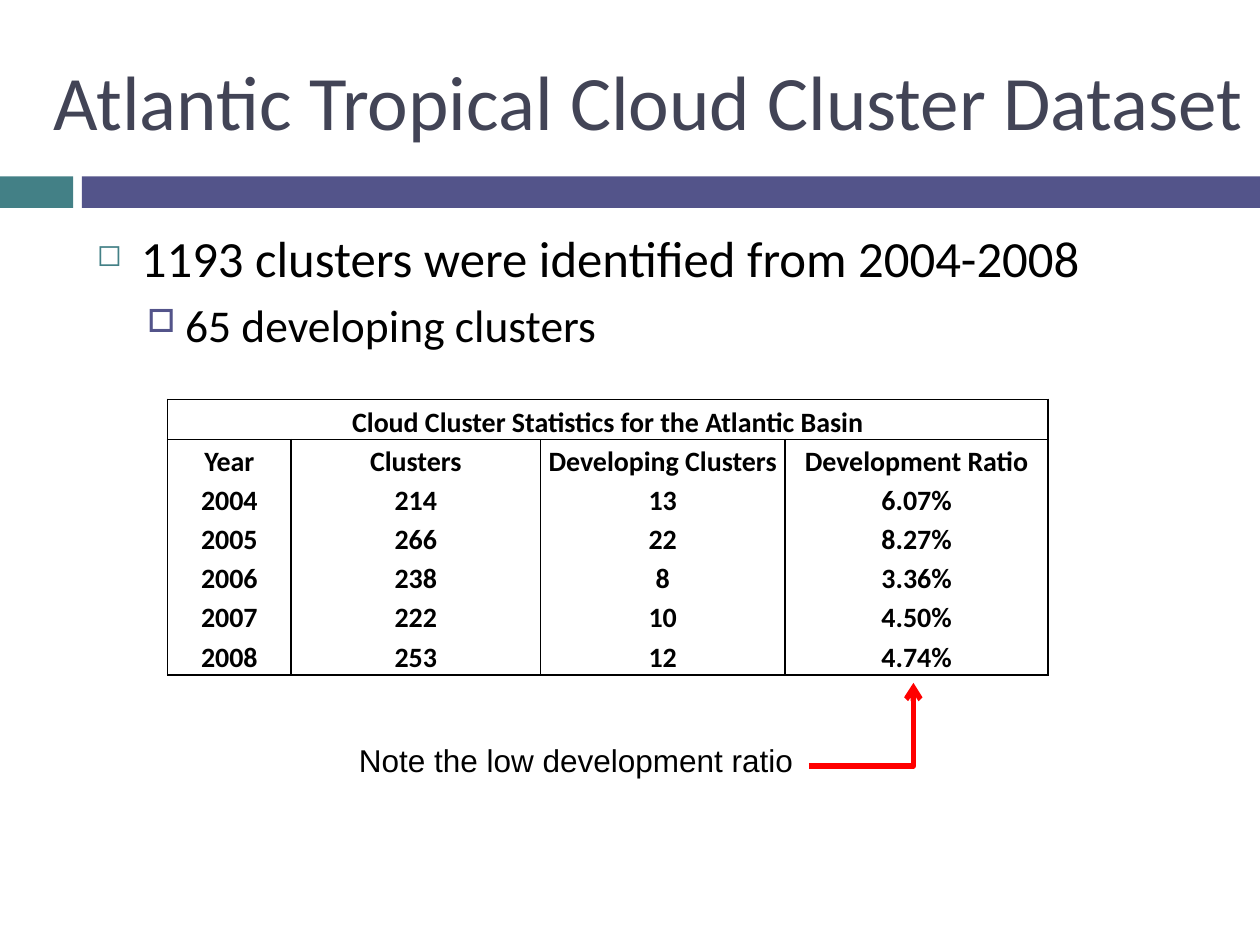
from lxml.etree import SubElement as Sub
from pptx import Presentation
from pptx.dml.color import RGBColor as RGB
from pptx.enum.shapes import MSO_CONNECTOR as Link, MSO_SHAPE as Shape
from pptx.enum.text import MSO_ANCHOR as Anchor, PP_ALIGN as Align
from pptx.oxml.ns import qn
from pptx.util import Inches, Pt

# Content
TITLE = "Atlantic Tropical Cloud Cluster Dataset"
NOTE = "Note the low development ratio"
BARS = [(0, 0.58, "438086"), (0.65, 9.35, "53548A")]
# text, size, space before, margin, hang, bullet, bullet colour, bullet percent
POINTS = [
    ("1193 clusters were identified from 2004-2008", 29, 7, 0.35, 0.35, "◻", "438086", 60),
    ("65 developing clusters", 26, 5.5, 0.7, 0.3, "□", "53548A", 70),
]
ROWS = [
    ("Cloud Cluster Statistics for the Atlantic Basin", "", "", ""),
    ("Year", "Clusters", "Developing Clusters", "Development Ratio"),
    ("2004", "214", "13", "6.07%"),
    ("2005", "266", "22", "8.27%"),
    ("2006", "238", "8", "3.36%"),
    ("2007", "222", "10", "4.50%"),
    ("2008", "253", "12", "4.74%"),
]
COLS = [0.98, 1.98, 1.94, 2.09]
HIGH = [0.32] + [0.31] * 5 + [0.32]
CELL = {"margin_left": Inches(0.01), "margin_right": Inches(0.01),
        "margin_top": Inches(0.01), "margin_bottom": 0,
        "vertical_anchor": Anchor.BOTTOM}


def color(code):
    return RGB.from_string(code)


def add(par, tag, **attrs):
    return Sub(par, qn(tag), {key: str(val) for key, val in attrs.items()})


def write(para, text, size, face="Calibri", tint="000000", bold=False):
    run = para.add_run()
    run.text = text
    for key, val in {"size": Pt(size), "name": face, "bold": bold}.items():
        setattr(run.font, key, val)
    run.font.color.rgb = color(tint)


def box(left, top, wide, high, wrap=True):
    area = [Inches(v) for v in (left, top, wide, high)]
    frame = slide.shapes.add_textbox(*area).text_frame
    frame.word_wrap = wrap
    return frame


def border(cell, drawn):
    props = cell._tc.get_or_add_tcPr()
    for side in "LRTB":
        line = add(props, f"a:ln{side}", w=Pt(1))
        if side in drawn:
            add(add(line, "a:solidFill"), "a:srgbClr", val="000000")
        else:
            add(line, "a:noFill")


deck = Presentation()
deck.slide_width, deck.slide_height = Inches(10), Inches(7.5)
slide = deck.slides.add_slide(deck.slide_layouts[6])

# Bars under the title
for left, wide, tint in BARS:
    bar = slide.shapes.add_shape(Shape.RECTANGLE, Inches(left), Inches(1.4),
                                 Inches(wide), Inches(0.25))
    bar.shadow.inherit = False
    bar.fill.solid()
    bar.fill.fore_color.rgb = color(tint)
    bar.line.fill.background()

# Title
frame = box(0.33, 0.25, 9.67, 1.08)
frame.vertical_anchor = Anchor.MIDDLE
write(frame.paragraphs[0], TITLE, 44, tint="424456")

# Bullet points
frame = box(0.67, 1.75, 8.92, 4.92)
for level, (text, size, gap, left, hang, mark, tint, pct) in enumerate(POINTS):
    para = frame.add_paragraph() if level else frame.paragraphs[0]
    para.level = level
    para.space_before = Pt(gap)
    props = para._p.get_or_add_pPr()
    props.set("marL", str(Inches(left)))
    props.set("indent", str(-Inches(hang)))
    add(add(props, "a:buClr"), "a:srgbClr", val=tint)
    add(props, "a:buSzPct", val=pct * 1000)
    add(props, "a:buChar", char=mark)
    write(para, text, size)

# Statistics table
table = slide.shapes.add_table(len(ROWS), len(COLS), Inches(1.33), Inches(3.17),
                               Inches(sum(COLS)), Inches(sum(HIGH))).table
table.first_row = table.horz_banding = False
for col, wide in zip(table.columns, COLS):
    col.width = Inches(wide)
for row, high in zip(table.rows, HIGH):
    row.height = Inches(high)
table.cell(0, 0).merge(table.cell(0, len(COLS) - 1))
EDGES = {0: "LRTB", 1: "LRT", len(ROWS) - 1: "LRB"}
for r, row in enumerate(ROWS):
    for c, text in enumerate(row):
        cell = table.cell(r, c)
        for key, val in CELL.items():
            setattr(cell, key, val)
        border(cell, EDGES.get(r, "LR"))
        cell.fill.background()
        if text:
            para = cell.text_frame.paragraphs[0]
            para.alignment = Align.CENTER
            write(para, text, 16, bold=True)

# Arrow from the note to the ratio column
arrow = slide.shapes.add_connector(Link.ELBOW, Inches(6.42), Inches(6.08),
                                   Inches(7.25), Inches(5.42))
arrow.line.color.rgb = color("FF0000")
arrow.line.width = Pt(3)
add(arrow.line._get_or_add_ln(), "a:tailEnd", type="arrow")
props = arrow._element.spPr
add(props, "a:effectLst")
add(props.find(".//" + qn("a:avLst")), "a:gd", name="adj1", fmla="val 99900")

# Note
frame = box(2.75, 5.83, 3.77, 0.4, wrap=False)
write(frame.paragraphs[0], NOTE, 18, face="Arial")

deck.save("out.pptx")
